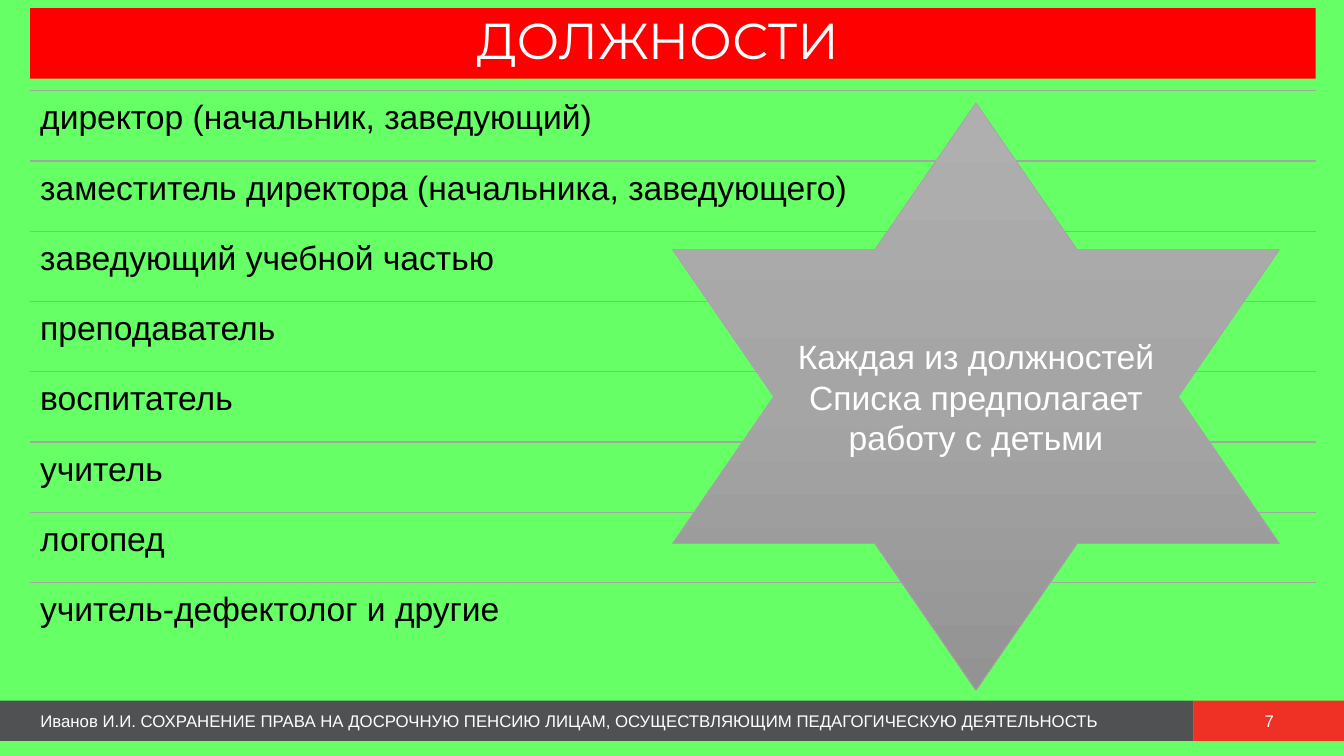
import copy
from dataclasses import dataclass, field
from typing import Any

import pptx
import pptx.dml.color
import pptx.enum.shapes
import pptx.enum.text
import pptx.oxml
import pptx.oxml.ns
import pptx.util

Inches = pptx.util.Inches
Pt = pptx.util.Pt
RGB = pptx.dml.color.RGBColor.from_string
Preset = pptx.enum.shapes.MSO_SHAPE
Align = pptx.enum.text.PP_ALIGN
Anchor = pptx.enum.text.MSO_ANCHOR


@dataclass(frozen=True)
class Theme:
    background: str = "66FF66"
    banner: str = "FF0000"
    footer: str = "505153"
    page: str = "EE3124"
    rule: str = "A5A5A5"
    star: tuple[str, str, str] = ("AFAFAF", "A5A5A5", "939393")
    light: str = "FFFFFF"
    dark: str = "000000"
    body_font: str = "Arial"
    title_font: str = "Montserrat"
    title_size: int = 36
    body_size: int = 24
    footer_size: int = 12


THEME = Theme()


@dataclass(frozen=True)
class Box:
    left: float
    top: float
    width: float
    height: float

    def emu(self) -> list[int]:
        return [Inches(v) for v in (self.left, self.top, self.width, self.height)]


@dataclass(frozen=True)
class Label:
    text: str
    size: int
    color: str = THEME.light
    font: str = THEME.body_font
    frame: dict[str, Any] = field(default_factory=dict)
    paragraph: dict[str, Any] = field(default_factory=dict)


@dataclass(frozen=True)
class Panel:
    box: Box
    label: Label
    fill: str = ""
    preset: Any = Preset.RECTANGLE


LIST_LEFT, LIST_TOP, LIST_WIDTH = 0.3, 0.9, 12.75
ROW_PITCH, ROW_HEIGHT = 0.697, 0.7
POSITIONS = [
    "директор (начальник, заведующий)",
    "заместитель директора (начальника, заведующего)",
    "заведующий учебной частью",
    "преподаватель",
    "воспитатель",
    "учитель",
    "логопед",
    "учитель-дефектолог и другие",
]
MIDDLE = {"vertical_anchor": Anchor.MIDDLE}
CENTERED = {"alignment": Align.CENTER}

BANDS = [
    Panel(
        Box(0, 6.95, 11.84, 0.4),
        Label(
            "Иванов И.И. СОХРАНЕНИЕ ПРАВА НА ДОСРОЧНУЮ ПЕНСИЮ ЛИЦАМ, "
            "ОСУЩЕСТВЛЯЮЩИМ ПЕДАГОГИЧЕСКУЮ ДЕЯТЕЛЬНОСТЬ",
            THEME.footer_size,
            frame=MIDDLE | {"margin_left": Inches(0.4)},
            paragraph={"alignment": Align.LEFT},
        ),
        THEME.footer,
    ),
    Panel(
        Box(11.84, 6.95, 1.5, 0.4),
        Label("7", THEME.footer_size, frame=MIDDLE, paragraph=CENTERED),
        THEME.page,
    ),
    Panel(
        Box(LIST_LEFT, 0.08, LIST_WIDTH, 0.7),
        Label(
            "ДОЛЖНОСТИ",
            THEME.title_size,
            font=THEME.title_font,
            frame=MIDDLE | {"margin_right": Inches(0.4)},
            paragraph=CENTERED | {"line_spacing": 0.9, "space_before": Pt(10)},
        ),
        THEME.banner,
    ),
]
STAR = Panel(
    Box(6.67, 1.02, 6.02, 5.83),
    Label(
        "Каждая из должностей Списка предполагает работу с детьми",
        THEME.body_size,
        frame=MIDDLE,
        paragraph=CENTERED,
    ),
    preset=Preset.STAR_6_POINT,
)


def apply_format(target: Any, values: dict[str, Any]) -> None:
    for name, value in values.items():
        setattr(target, name, value)


def write(shape: Any, label: Label) -> None:
    frame = shape.text_frame
    apply_format(frame, {"word_wrap": True} | label.frame)
    paragraph = frame.paragraphs[0]
    apply_format(paragraph, label.paragraph)
    run = paragraph.add_run()
    run.text = label.text
    apply_format(run.font, {"name": label.font, "size": Pt(label.size)})
    run.font.color.rgb = RGB(label.color)


def add_panel(shapes: Any, panel: Panel) -> Any:
    shape = shapes.add_shape(panel.preset, *panel.box.emu())
    shape.shadow.inherit = False
    shape.line.fill.background()
    if panel.fill:
        shape.fill.solid()
        shape.fill.fore_color.rgb = RGB(panel.fill)
    write(shape, panel.label)
    return shape


def add_position(shapes: Any, text: str, top: float) -> None:
    """Draw one list row: a hairline on top and the job title below it."""
    row = Box(LIST_LEFT, top, LIST_WIDTH, ROW_HEIGHT)
    left, y, width, _ = row.emu()
    rule = shapes.add_connector(
        pptx.enum.shapes.MSO_CONNECTOR.STRAIGHT, left, y, left + width, y
    )
    rule.line.color.rgb = RGB(THEME.rule)
    rule.line.width = Pt(1)
    rule._element.spPr.append(pptx.oxml.parse_xml(
        f"<a:effectLst {pptx.oxml.ns.nsdecls('a')}/>"
    ))
    margins = {f"margin_{side}": Inches(0.1) for side in ("left", "top", "right", "bottom")}
    write(
        shapes.add_textbox(*row.emu()),
        Label(text, THEME.body_size, THEME.dark,
              frame=margins, paragraph={"line_spacing": 0.9}),
    )


def shade_star(star: Any) -> None:
    """Give the star a three-stop gradient running downwards and a thin edge."""
    star.fill.gradient()
    star.fill.gradient_angle = 270
    stop_list = star._element.spPr.find(".//" + pptx.oxml.ns.qn("a:gsLst"))
    stop_list.insert(1, copy.deepcopy(stop_list[0]))
    for index, (stop, color) in enumerate(zip(star.fill.gradient_stops, THEME.star)):
        stop.color.rgb = RGB(color)
        stop.position = index / 2
    star.line.color.rgb = RGB(THEME.rule)
    star.line.width = Pt(0.5)


def main() -> None:
    deck = pptx.Presentation()
    apply_format(deck, {"slide_width": Inches(13.33), "slide_height": Inches(7.5)})
    slide = deck.slides.add_slide(deck.slide_layouts[6])
    slide.background.fill.solid()
    slide.background.fill.fore_color.rgb = RGB(THEME.background)

    for band in BANDS:
        add_panel(slide.shapes, band)
    position_list = slide.shapes.add_group_shape()
    for index, position in enumerate(POSITIONS):
        add_position(position_list.shapes, position, LIST_TOP + index * ROW_PITCH)
    shade_star(add_panel(slide.shapes, STAR))

    deck.save("out.pptx")


if __name__ == "__main__":
    main()
